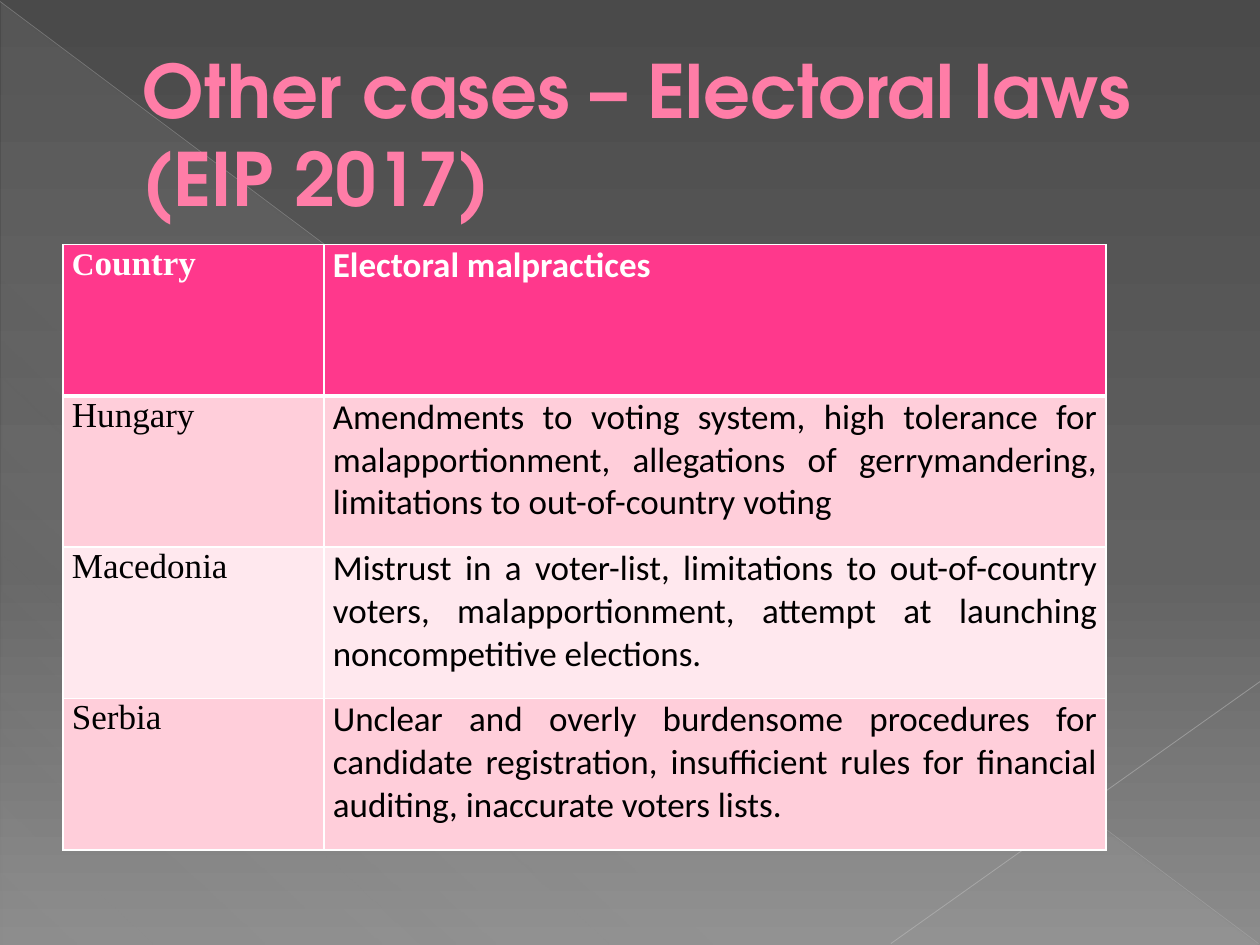
from lxml import etree
from pptx import Presentation
from pptx.dml.color import RGBColor
from pptx.enum.shapes import MSO_CONNECTOR, MSO_SHAPE
from pptx.enum.text import MSO_ANCHOR, PP_ALIGN
from pptx.oxml.ns import qn
from pptx.util import Cm, Pt

TRIANGLE = MSO_SHAPE.RIGHT_TRIANGLE
STRAIGHT = MSO_CONNECTOR.STRAIGHT
MIDDLE = MSO_ANCHOR.MIDDLE
LEFT, JUSTIFY = PP_ALIGN.LEFT, PP_ALIGN.JUSTIFY

COLORS = {
    "title": "FF7DA7", "title outline": "B12761",
    "header": "FF388C", "odd row": "FFCEDA", "even row": "FFE8EE",
    "white": "FFFFFF", "black": "000000",
    "top": "4A4A4A", "middle": "626262", "bottom": "8C8C8C",
    "triangle": "D2D2D2", "long line": "BFBFBF", "short line": "C6C6C6",
}


def add_color(parent, name, alpha=100):
    """Append a colour with its opacity in percent to an XML element."""
    color = etree.SubElement(parent, qn("a:srgbClr"), val=COLORS[name])
    if alpha < 100:
        etree.SubElement(color, qn("a:alpha"), val=str(alpha * 1000))


def set_gradient(owner, stops, angle):
    """Replace the stops and the clockwise angle of the owner's gradient fill."""
    gradient = owner.find(".//" + qn("a:gradFill"))
    for child in list(gradient):
        gradient.remove(child)
    stop_list = etree.SubElement(gradient, qn("a:gsLst"))
    for position, name, alpha in stops:
        stop = etree.SubElement(stop_list, qn("a:gs"), pos=str(position * 1000))
        add_color(stop, name, alpha)
    etree.SubElement(gradient, qn("a:lin"), ang=str(angle * 60000), scaled="0")


deck = Presentation()
deck.slide_width, deck.slide_height = Cm(25.4), Cm(19.05)
page = deck.slides.add_slide(deck.slide_layouts[5])

# Background and decoration
page.background.fill.gradient()
set_gradient(page.element, [(0, "top", 100), (60, "middle", 100), (100, "bottom", 100)], 90)

triangle = page.shapes.add_shape(TRIANGLE, Cm(0.03), Cm(0.05), Cm(25.35), Cm(19))
triangle.shadow.inherit = False
triangle.line.fill.background()
triangle.fill.gradient()
set_gradient(triangle.element, [(0, "triangle", 10), (70, "triangle", 8), (100, "triangle", 1)], 133)

for x1, y1, x2, y2, name, width, alpha in [
    (0, 0.03, 25.37, 19.02, "long line", 0.39, 35),
    (25.4, 13.74, 17.96, 19.02, "short line", 0.47, 45),
]:
    line = page.shapes.add_connector(STRAIGHT, Cm(x1), Cm(y1), Cm(x2), Cm(y2))
    line.line.width = Pt(width)
    line.line.fill.solid()
    solid = line.element.find(".//" + qn("a:solidFill"))
    add_color(solid, name, alpha)
    etree.SubElement(line.element.spPr, qn("a:effectLst"))

# Title, in front of the decoration
title = page.shapes.title
title.element.getparent().append(title.element)
title.left, title.top, title.width, title.height = Cm(1.27), Cm(0.74), Cm(22.86), Cm(3.89)
title.text_frame.text = "Other cases – Electoral laws (EIP 2017)"
title.text_frame.vertical_anchor = MIDDLE
title.text_frame.word_wrap = True
para = title.text_frame.paragraphs[0]
para.alignment = LEFT
properties = para._p.get_or_add_pPr()
properties.set("marL", str(Cm(1.35)))
properties.set("indent", "0")
span = para.runs[0]
span.font.name, span.font.size, span.font.bold = "TeX Gyre Adventor", Pt(42), True
span.font.color.rgb = RGBColor.from_string(COLORS["title"])
outline = etree.Element(qn("a:ln"), w=str(Pt(0.5)))
add_color(etree.SubElement(outline, qn("a:solidFill")), "title outline")
span.font._element.insert(0, outline)

# Table
rows = [
    ("Country", "Electoral malpractices"),
    ("Hungary", "Amendments to voting system, high tolerance for malapportionment, "
                "allegations of gerrymandering, limitations to out-of-country voting"),
    ("Macedonia", "Mistrust in a voter-list, limitations to out-of-country voters, "
                  "malapportionment, attempt at launching noncompetitive elections."),
    ("Serbia", "Unclear and overly burdensome procedures for candidate registration, "
               "insufficient rules for financial auditing, inaccurate voters lists."),
]
row_fills = ["header", "odd row", "even row", "odd row"]
column_fonts = ["Times New Roman", "Calibri"]

table = page.shapes.add_table(len(rows), 2, Cm(1.27), Cm(4.93), Cm(21.03), Cm(12.2)).table
table.columns[0].width, table.columns[1].width = Cm(5.26), Cm(15.77)

for row_number, texts in enumerate(rows):
    is_header = row_number == 0
    for column_number, text in enumerate(texts):
        cell = table.cell(row_number, column_number)
        cell.margin_left = cell.margin_right = Cm(0.18)
        cell.margin_top = cell.margin_bottom = 0
        cell.text_frame.text = text
        para = cell.text_frame.paragraphs[0]
        para.alignment = JUSTIFY
        if text == "Country":
            para.runs[0].text = "C"
            para.add_run().text = "ountry"
        for span in para.runs:
            span.font.name = column_fonts[column_number]
            span.font.size = Pt(18 if span.text == "C" else 20)
            span.font.bold = is_header
            span.font.color.rgb = RGBColor.from_string(COLORS["white" if is_header else "black"])
        cell_properties = cell._tc.get_or_add_tcPr()
        for side in "LRTB":
            below_header = (row_number, side) in [(0, "B"), (1, "T")]
            border = etree.SubElement(cell_properties, qn("a:ln" + side),
                                      w=str(Pt(3 if below_header else 1)))
            add_color(etree.SubElement(border, qn("a:solidFill")), "white")
        cell.fill.solid()
        cell.fill.fore_color.rgb = RGBColor.from_string(COLORS[row_fills[row_number]])

deck.save("out.pptx")
